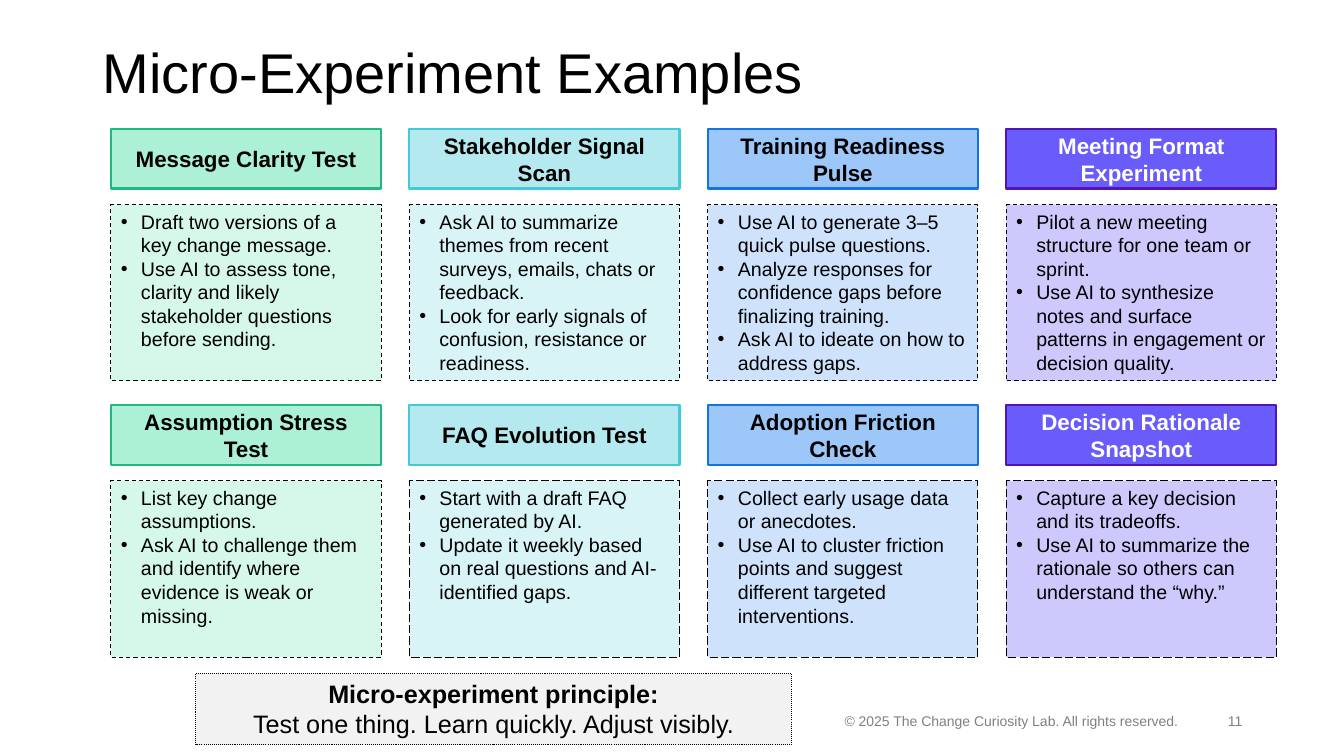
import dataclasses

import pptx
import pptx.dml.color
import pptx.enum.dml
import pptx.enum.shapes
import pptx.enum.text
import pptx.oxml
import pptx.oxml.ns
import pptx.util

Inches = pptx.util.Inches
Pt = pptx.util.Pt
Align = pptx.enum.text.PP_ALIGN
Anchor = pptx.enum.text.MSO_ANCHOR
Fit = pptx.enum.text.MSO_AUTO_SIZE
Dash = pptx.enum.dml.MSO_LINE

BLACK, WHITE, GREY = "000000", "FFFFFF", "808080"
LEFT, TOP = 1.1, 1.28
WIDE, HEAD, BODY = 2.68, 0.59, 1.75
STEP_X, STEP_Y, DROP = 2.96, 2.74, 0.75


@dataclasses.dataclass
class Theme:
    head: str
    edge: str
    body: str
    ink: str = BLACK


@dataclasses.dataclass
class Card:
    title: str
    items: list[str]
    dash: Dash = Dash.DASH


THEMES = [
    Theme("ACF1D6", "20BA7F", "D6F8EB"),
    Theme("B4EAEF", "43CAD7", "D9F4F7"),
    Theme("9DC7F8", "1174E5", "CEE3FB"),
    Theme("695CFA", "5114B5", "CDC9FD", WHITE),
]

ROWS = [
    [
        Card("Message Clarity Test", [
            "Draft two versions of a key change message.",
            "Use AI to assess tone, clarity and likely stakeholder questions before sending."]),
        Card("Stakeholder Signal Scan", [
            "Ask AI to summarize themes from recent surveys, emails, chats or feedback.",
            "Look for early signals of confusion, resistance or readiness."]),
        Card("Training Readiness Pulse", [
            "Use AI to generate 3–5 quick pulse questions.",
            "Analyze responses for confidence gaps before finalizing training.",
            "Ask AI to ideate on how to address gaps."]),
        Card("Meeting Format Experiment", [
            "Pilot a new meeting structure for one team or sprint.",
            "Use AI to synthesize notes and surface patterns in engagement or decision quality."]),
    ],
    [
        Card("Assumption Stress Test", [
            "List key change assumptions.",
            "Ask AI to challenge them and identify where evidence is weak or missing."]),
        Card("FAQ Evolution Test", [
            "Start with a draft FAQ generated by AI.",
            "Update it weekly based on real questions and AI-identified gaps."], Dash.LONG_DASH),
        Card("Adoption Friction Check", [
            "Collect early usage data or anecdotes.",
            "Use AI to cluster friction points and suggest different targeted interventions."],
            Dash.LONG_DASH),
        Card("Decision Rationale Snapshot", [
            "Capture a key decision and its tradeoffs.",
            "Use AI to summarize the rationale so others can understand the “why.”"],
            Dash.LONG_DASH),
    ],
]


def paint(target, color: str) -> None:
    target.rgb = pptx.dml.color.RGBColor.from_string(color)


def write(para, text: str, size: float, color: str = BLACK, bold: bool = False) -> None:
    run = para.add_run()
    run.text = text
    run.font.name = "Arial"
    run.font.size = Pt(size)
    run.font.bold = bold
    paint(run.font.color, color)


def bullet(para) -> None:
    props = para._p.get_or_add_pPr()
    props.set("marL", str(Inches(0.2)))
    props.set("indent", str(Inches(-0.2)))
    for tag, key, value in (("buFont", "typeface", "Arial"), ("buChar", "char", "•")):
        mark = pptx.oxml.parse_xml(
            f'<a:{tag} {pptx.oxml.ns.nsdecls("a")} {key}="{value}"/>')
        props.append(mark)


def box(slide, x: float, y: float, w: float, h: float, fill: str, edge: str,
        weight: float, dash=None):
    shape = slide.shapes.add_shape(
        pptx.enum.shapes.MSO_SHAPE.RECTANGLE, Inches(x), Inches(y), Inches(w), Inches(h))
    shape.shadow.inherit = False
    shape.fill.solid()
    paint(shape.fill.fore_color, fill)
    paint(shape.line.color, edge)
    shape.line.width = Pt(weight)
    if dash:
        shape.line.dash_style = dash
    shape.text_frame.word_wrap = True
    return shape


def draw(slide, card: Card, theme: Theme, x: float, y: float) -> None:
    # Detail panel
    frame = box(slide, x, y + DROP, WIDE, BODY, theme.body, BLACK, 0.75, card.dash).text_frame
    frame.vertical_anchor = Anchor.TOP
    frame.auto_size = Fit.SHAPE_TO_FIT_TEXT
    for i, item in enumerate(card.items):
        para = frame.add_paragraph() if i else frame.paragraphs[0]
        para.alignment = Align.LEFT
        bullet(para)
        write(para, item, 14)
    # Heading bar
    frame = box(slide, x, y, WIDE, HEAD, theme.head, theme.edge, 1.5).text_frame
    frame.vertical_anchor = Anchor.MIDDLE
    para = frame.paragraphs[0]
    para.alignment = Align.CENTER
    write(para, card.title, 16, theme.ink, True)


def note(slide, text: str, x: float, y: float, w: float, h: float, anchor: Anchor) -> None:
    label = slide.shapes.add_textbox(Inches(x), Inches(y), Inches(w), Inches(h))
    frame = label.text_frame
    frame.word_wrap = True
    frame.vertical_anchor = anchor
    para = frame.paragraphs[0]
    para.alignment = Align.RIGHT
    write(para, text, 10, GREY)


def main() -> None:
    deck = pptx.Presentation()
    deck.slide_width, deck.slide_height = Inches(13.33), Inches(7.5)
    slide = deck.slides.add_slide(deck.slide_layouts[5])

    # Title
    title = slide.shapes.title
    title.left, title.top = Inches(0.92), Inches(0.4)
    title.width, title.height = Inches(7.95), Inches(1.45)
    frame = title.text_frame
    frame.word_wrap = True
    frame.auto_size = Fit.NONE
    frame.vertical_anchor = Anchor.TOP
    para = frame.paragraphs[0]
    para.alignment = Align.LEFT
    para.line_spacing = 0.9
    write(para, "Micro-Experiment Examples", 40)

    # Grid of experiments
    for r, row in enumerate(ROWS):
        for c, (card, theme) in enumerate(zip(row, THEMES)):
            draw(slide, card, theme, LEFT + c * STEP_X, TOP + r * STEP_Y)

    # Principle
    frame = box(slide, 1.94, 6.68, 5.91, 0.71, "F2F2F2", BLACK, 0.75, Dash.ROUND_DOT).text_frame
    frame.margin_left = frame.margin_right = Inches(0.05)
    frame.margin_top = frame.margin_bottom = Inches(0.05)
    frame.vertical_anchor = Anchor.TOP
    frame.auto_size = Fit.SHAPE_TO_FIT_TEXT
    para = frame.paragraphs[0]
    para.alignment = Align.CENTER
    write(para, "Micro-experiment principle:", 18, bold=True)
    para.add_line_break()
    write(para, "Test one thing. Learn quickly. Adjust visibly.", 18)

    # Footer
    note(slide, "© 2025 The Change Curiosity Lab. All rights reserved.",
         7.89, 7.02, 3.89, 0.27, Anchor.TOP)
    note(slide, "11", 11.79, 6.95, 0.63, 0.4, Anchor.MIDDLE)

    deck.save("out.pptx")


if __name__ == "__main__":
    main()
